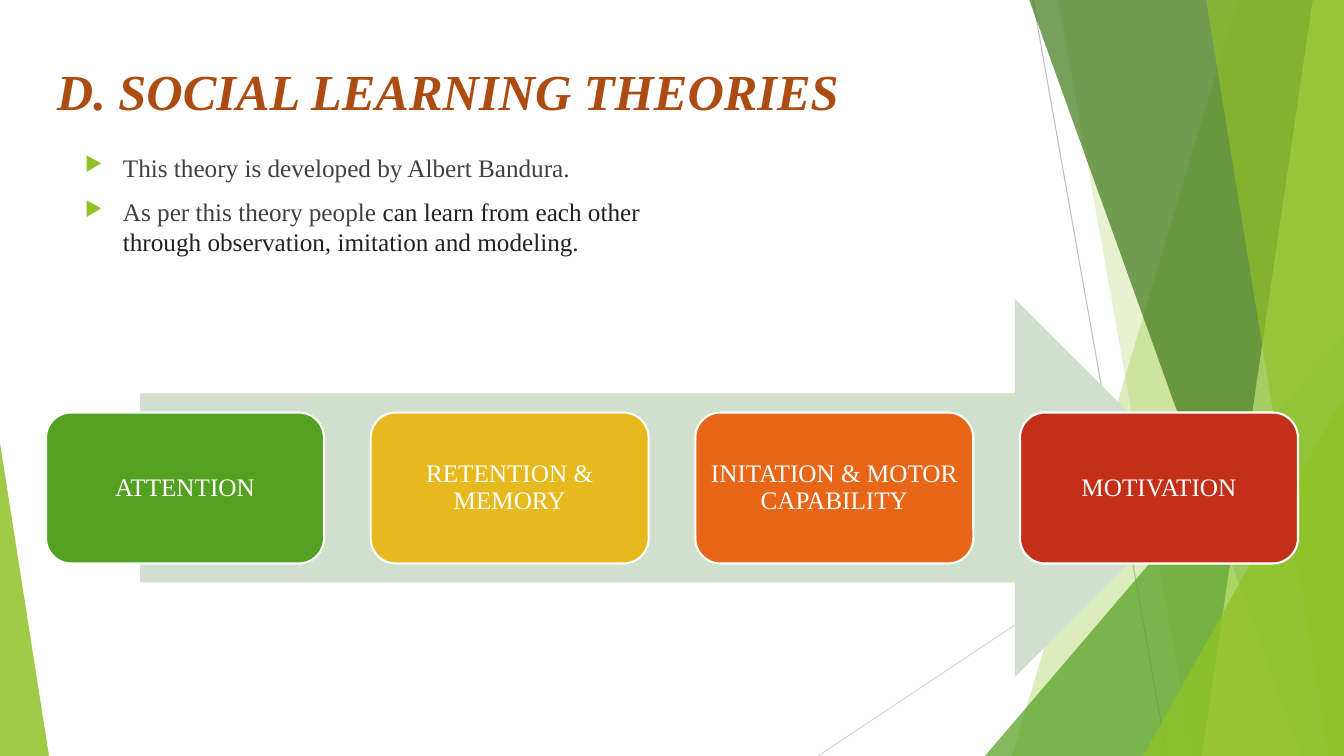
from lxml import etree
from pptx import Presentation
from pptx.dml.color import RGBColor
from pptx.enum.shapes import MSO_CONNECTOR, MSO_SHAPE as SHAPE
from pptx.enum.text import MSO_ANCHOR as ANCHOR, PP_ALIGN as ALIGN
from pptx.oxml.ns import qn
from pptx.util import Pt

WIDTH, HEIGHT = 1344, 756
SCALE = 12192000 / WIDTH
FONT = "Times New Roman"

WHITE = RGBColor(0xFF, 0xFF, 0xFF)
LIME = RGBColor(0x90, 0xC2, 0x26)
PALE_LIME = RGBColor(0xC0, 0xE4, 0x74)
GREEN = RGBColor(0x54, 0xA0, 0x21)
DARK_GREEN = RGBColor(0x3F, 0x78, 0x19)
SAGE = RGBColor(0xD1, 0xDF, 0xCD)
YELLOW = RGBColor(0xE6, 0xB9, 0x1E)
ORANGE = RGBColor(0xE7, 0x66, 0x18)
RED = RGBColor(0xC4, 0x2F, 0x1A)
RUST = RGBColor(0xAD, 0x4C, 0x12)
GRAY = RGBColor(0x40, 0x40, 0x40)
INK = RGBColor(0x20, 0x21, 0x24)
LINE_GRAY = RGBColor(0xBF, 0xBF, 0xBF)
LIGHT_GRAY = RGBColor(0xD9, 0xD9, 0xD9)


def px(length):
    return round(length * SCALE)


def style(shape, fill, opacity=100, line=None):
    shape.shadow.inherit = False
    shape.fill.solid()
    shape.fill.fore_color.rgb = fill
    if opacity < 100:
        color = shape.fill._xPr.find(".//" + qn("a:srgbClr"))
        etree.SubElement(color, qn("a:alpha"), val=str(opacity * 1000))
    if line is None:
        shape.line.fill.background()
    else:
        shape.line.color.rgb = line
        shape.line.width = Pt(1.5)


def add_preset(page, kind, box, fill, **look):
    shape = page.shapes.add_shape(kind, *map(px, box))
    style(shape, fill, **look)
    return shape


def add_span(para, text, color, size=18, bold=False, italic=False):
    span = para.add_run()
    span.text = text
    span.font.name = FONT
    span.font.size = Pt(size)
    span.font.bold = bold
    span.font.italic = italic
    span.font.color.rgb = color


def add_text_box(page, box, anchor):
    frame = page.shapes.add_textbox(*map(px, box)).text_frame
    frame.word_wrap = True
    frame.vertical_anchor = anchor
    return frame


def add_bullet(para, indent):
    props = para._p.get_or_add_pPr()
    props.set("marL", str(px(indent)))
    props.set("indent", str(-px(indent)))
    color = etree.SubElement(props, qn("a:buClr"))
    etree.SubElement(color, qn("a:srgbClr"), val=str(LIME))
    etree.SubElement(props, qn("a:buSzPct"), val="80000")
    etree.SubElement(props, qn("a:buChar"), char="▶")


def add_hairline(page, start, end, color):
    line = page.shapes.add_connector(MSO_CONNECTOR.STRAIGHT, *map(px, start + end))
    line.line.color.rgb = color
    line.line.width = Pt(0.75)
    etree.SubElement(line._element.spPr, qn("a:effectLst"))


def add_band(page, top_x, bottom_x, fill, opacity):
    """Full-height band from a slanted left edge to the right slide edge."""
    builder = page.shapes.build_freeform(px(top_x), px(-1), scale=1.0)
    corners = [(WIDTH, -1), (WIDTH, HEIGHT), (bottom_x, HEIGHT)]
    builder.add_line_segments([(px(x), px(y)) for x, y in corners], close=True)
    style(builder.convert_to_shape(), fill, opacity)


def add_corner(page, left, top, right, apex, fill, opacity):
    """Right-angled triangle standing on the bottom slide edge."""
    box = (left, top, right - left, HEIGHT - top)
    triangle = add_preset(page, SHAPE.ISOSCELES_TRIANGLE, box, fill, opacity=opacity)
    triangle.adjustments[0] = apex


def add_backdrop(page):
    add_hairline(page, (1033, 0), (1167, HEIGHT), LINE_GRAY)
    add_hairline(page, (WIDTH, 406), (818, HEIGHT), LIGHT_GRAY)
    add_band(page, 1238, 1012, LIME, 30)
    add_band(page, 1058, 1193, LIME, 20)
    add_corner(page, 985, 336, WIDTH, 1, GREEN, 72)
    add_band(page, 1029, 1301, DARK_GREEN, 70)
    add_band(page, 1313, 1202, PALE_LIME, 70)
    add_band(page, 1206, 1329, LIME, 65)
    add_corner(page, 1143, 396, WIDTH, 1, LIME, 80)
    add_corner(page, 0, 443, 49, 0, LIME, 85)


def add_title(page, box, text):
    para = add_text_box(page, box, ANCHOR.MIDDLE).paragraphs[0]
    add_span(para, text, RUST, size=36, bold=True, italic=True)


def add_body(page, box, points):
    frame = add_text_box(page, box, ANCHOR.TOP)
    for index, spans in enumerate(points):
        para = frame.add_paragraph() if index else frame.paragraphs[0]
        add_bullet(para, 38)
        if index:
            para.space_before = Pt(10)
        for text, color in spans:
            add_span(para, text, color)


def add_process(page, box, steps):
    left, top, width, height = box
    # Arrow centred behind the steps
    arrow_width = 1064
    arrow_left = left + (width - arrow_width) / 2
    add_preset(page, SHAPE.RIGHT_ARROW, (arrow_left, top, arrow_width, height), SAGE)

    # Evenly spaced steps
    step_width, step_height = 278, 151
    pitch = (width - step_width) / (len(steps) - 1)
    step_top = top + (height - step_height) / 2
    for index, (label, color) in enumerate(steps):
        step_box = (left + index * pitch, step_top, step_width, step_height)
        step = add_preset(page, SHAPE.ROUNDED_RECTANGLE, step_box, color, line=WHITE)
        frame = step.text_frame
        frame.word_wrap = True
        frame.vertical_anchor = ANCHOR.MIDDLE
        frame.margin_left = frame.margin_right = px(7)
        frame.margin_top = frame.margin_bottom = px(7)
        para = frame.paragraphs[0]
        para.alignment = ALIGN.CENTER
        para.line_spacing = 0.9
        add_span(para, label, WHITE)


def main():
    deck = Presentation()
    deck.slide_width, deck.slide_height = px(WIDTH), px(HEIGHT)
    page = deck.slides.add_slide(deck.slide_layouts[6])
    add_backdrop(page)
    add_title(page, (47, 49, 948, 82), "D. SOCIAL LEARNING THEORIES")
    add_body(page, (75, 147, 617, 519), [
        [("This theory is developed by Albert Bandura.", GRAY)],
        [("As per this theory people ", GRAY),
         ("can learn from each other through observation, imitation and modeling.", INK)],
    ])
    add_process(page, (46, 299, 1252, 378), [
        ("ATTENTION", GREEN),
        ("RETENTION & MEMORY", YELLOW),
        ("INITATION & MOTOR CAPABILITY", ORANGE),
        ("MOTIVATION", RED),
    ])
    deck.save("out.pptx")


if __name__ == "__main__":
    main()
